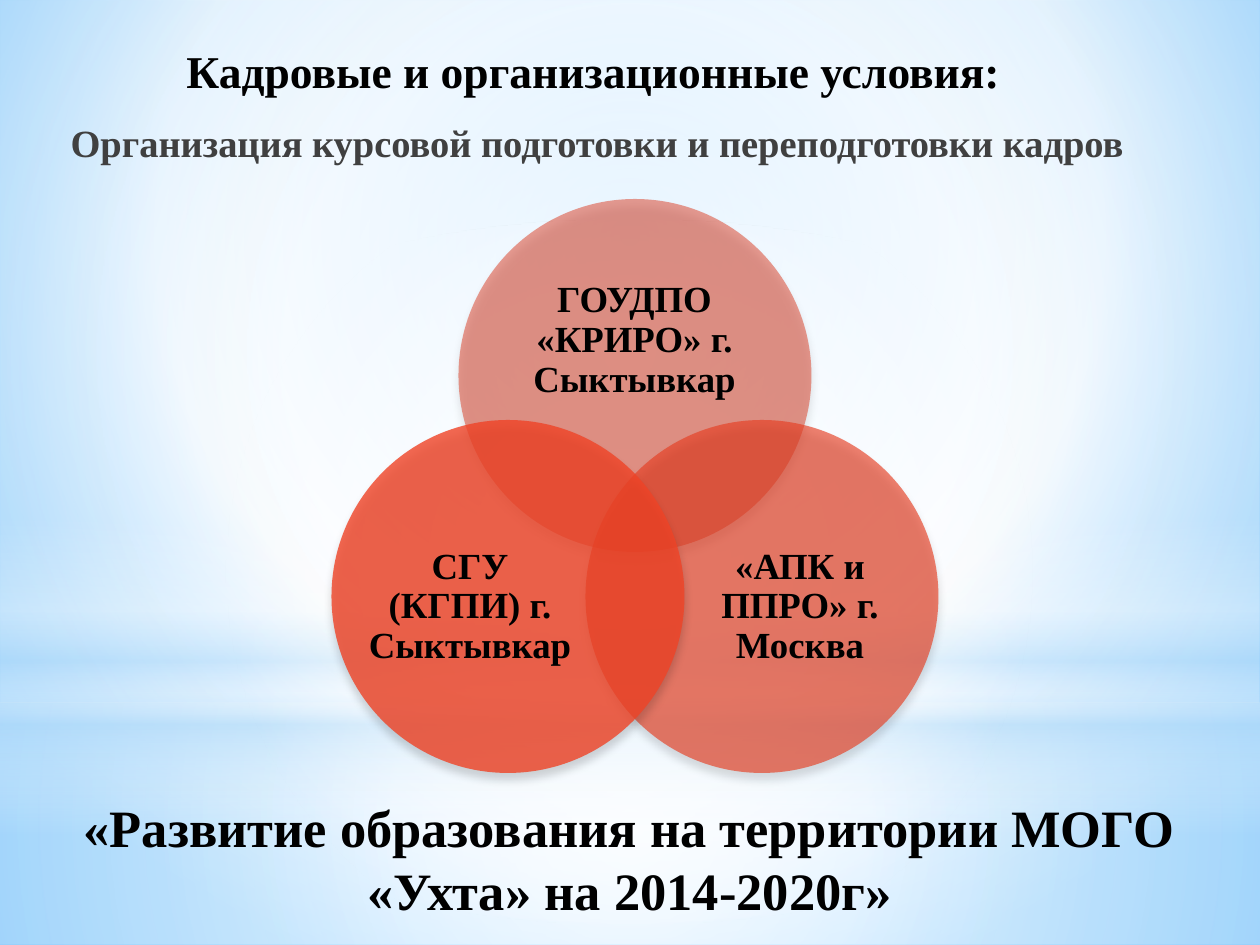
from lxml import etree
from pptx import Presentation
from pptx.dml.color import RGBColor
from pptx.enum.shapes import MSO_SHAPE as Shape
from pptx.enum.text import MSO_ANCHOR as Anchor, PP_ALIGN as Align
from pptx.oxml.ns import qn
from pptx.util import Emu, Pt

PX = 914400 / 126
FONT = "Times New Roman"

TITLE = "Организация курсовой подготовки и переподготовки кадров"
HEADING = "Кадровые и организационные условия:"
PROGRAM = "«Развитие образования на территории МОГО «Ухта» на 2014-2020г»"

BACKGROUND = ([(0, "9ED5FF", 100), (60, "FFFFFF", 100), (100, "5BB9FF", 100)], (20, 10, 20, 60))
CENTRE = (50, 50, 50, 50)
BACKDROP = [
    (Shape.RECTANGLE, (0, 703, 1260, 242),
     [(0, "FFFFFF", 91), (37, "FFFFFF", 76), (100, "B4DCFA", 79)], CENTRE),
    (Shape.RECTANGLE, (0, 0, 1260, 703),
     [(0, "FFFFFF", 89), (48, "FFFFFF", 62), (100, "B4DCFA", 79)], CENTRE),
    (Shape.RECTANGLE, (0, 519, 1260, 315),
     [(0, "FFFFFF", 0), (29, "FFFFFF", 30), (45, "B4DCFA", 40),
      (55, "FFFFFF", 26), (65, "B4DCFA", 60), (100, "FFFFFF", 0)], None),
    (Shape.OVAL, (0, 220, 1260, 703), [(0, "FFFFFF", 100), (56, "FFFFFF", 0)], CENTRE),
]

DIAMETER, VENN_X, VENN_Y, STEP_X, STEP_Y = 353, 635, 199, 127, 221
CIRCLES = [
    ("ГОУДПО «КРИРО» г. Сыктывкар", 0, 0, "DB3B21", 50, (505, 261, 259, 159)),
    ("«АПК и ППРО» г. Москва", 1, 1, "E73E22", 65, (694, 510, 212, 194)),
    ("СГУ (КГПИ) г. Сыктывкар", -1, 1, "F04326", 80, (364, 510, 212, 194)),
]
NO_INSETS = dict.fromkeys(("margin_left", "margin_top", "margin_right", "margin_bottom"), 0)


def emu(box):
    return [Emu(round(value * PX)) for value in box]


def color(value):
    return RGBColor.from_string(value)


def node(parent, tag, **attributes):
    child = etree.SubElement(parent, qn(tag))
    for name, value in attributes.items():
        child.set(name, str(value))
    return child


def color_node(parent, value, alpha):
    node(node(parent, "a:srgbClr", val=value), "a:alpha", val=alpha * 1000)


def gradient(stops, focus):
    fill = etree.Element(qn("a:gradFill"), rotWithShape="1")
    stop_list = node(fill, "a:gsLst")
    for position, value, alpha in stops:
        color_node(node(stop_list, "a:gs", pos=position * 1000), value, alpha)
    if focus:
        sides = {side: part * 1000 for side, part in zip("ltrb", focus)}
        node(node(fill, "a:path", path="circle"), "a:fillToRect", **sides)
    else:
        node(fill, "a:lin", ang=90 * 60000, scaled=0)
    return fill


def swap_fill(properties, fill):
    solid = properties.find(qn("a:solidFill"))
    properties.replace(solid, fill)


def add_plain(shapes, preset, box, value):
    shape = shapes.add_shape(preset, *emu(box))
    shape.shadow.inherit = False
    shape.line.fill.background()
    shape.fill.solid()
    shape.fill.fore_color.rgb = color(value)
    return shape


def write(shape, words, size, value="000000", align=Align.CENTER, spacing=None, **frame_format):
    frame = shape.text_frame
    for name, setting in {"word_wrap": True, **frame_format}.items():
        setattr(frame, name, setting)
    paragraph = frame.paragraphs[0]
    paragraph.alignment = align
    if spacing:
        paragraph.line_spacing = spacing
    run = paragraph.add_run()
    run.text = words
    for name, setting in {"name": FONT, "size": Pt(size), "bold": True}.items():
        setattr(run.font, name, setting)
    run.font.color.rgb = color(value)


def add_circle(shapes, box, value, alpha):
    circle = add_plain(shapes, Shape.OVAL, box, value)
    properties = circle._element.spPr
    node(properties.find(qn("a:solidFill"))[0], "a:alpha", val=alpha * 1000)
    shadow = node(properties.find(qn("a:effectLst")), "a:outerShdw", blurRad=Pt(5),
                  dist=Pt(4), dir=90 * 60000, rotWithShape=0)
    color_node(shadow, "000000", 20)


def main():
    deck = Presentation()
    deck.slide_width, deck.slide_height = emu((1260, 945))
    slide = deck.slides.add_slide(deck.slide_layouts[5])
    shapes = slide.shapes

    slide.background.fill.solid()
    swap_fill(slide._element.cSld.bg.bgPr, gradient(*BACKGROUND))
    for preset, box, stops, focus in BACKDROP:
        panel = add_plain(shapes, preset, box, "FFFFFF")
        swap_fill(panel._element.spPr, gradient(stops, focus))

    title = shapes.title
    shapes._spTree.append(title._element)
    title.left, title.top, title.width, title.height = emu((49, 110, 1096, 65))
    write(title, TITLE, 22, "404040", vertical_anchor=Anchor.MIDDLE)

    venn = shapes.add_group_shape().shapes
    for words, column, row, value, alpha, label_box in CIRCLES:
        left = VENN_X - DIAMETER / 2 + column * STEP_X
        top = VENN_Y + row * STEP_Y
        add_circle(venn, (left, top, DIAMETER, DIAMETER), value, alpha)
        label = venn.add_textbox(*emu(label_box))
        write(label, words, 21, spacing=0.9, vertical_anchor=Anchor.MIDDLE, **NO_INSETS)

    write(shapes.add_textbox(*emu((44, 789, 1171, 140))), PROGRAM, 30)
    write(shapes.add_textbox(*emu((174, 37, 883, 68))), HEADING, 26, align=Align.LEFT)

    deck.save("out.pptx")


if __name__ == "__main__":
    main()
